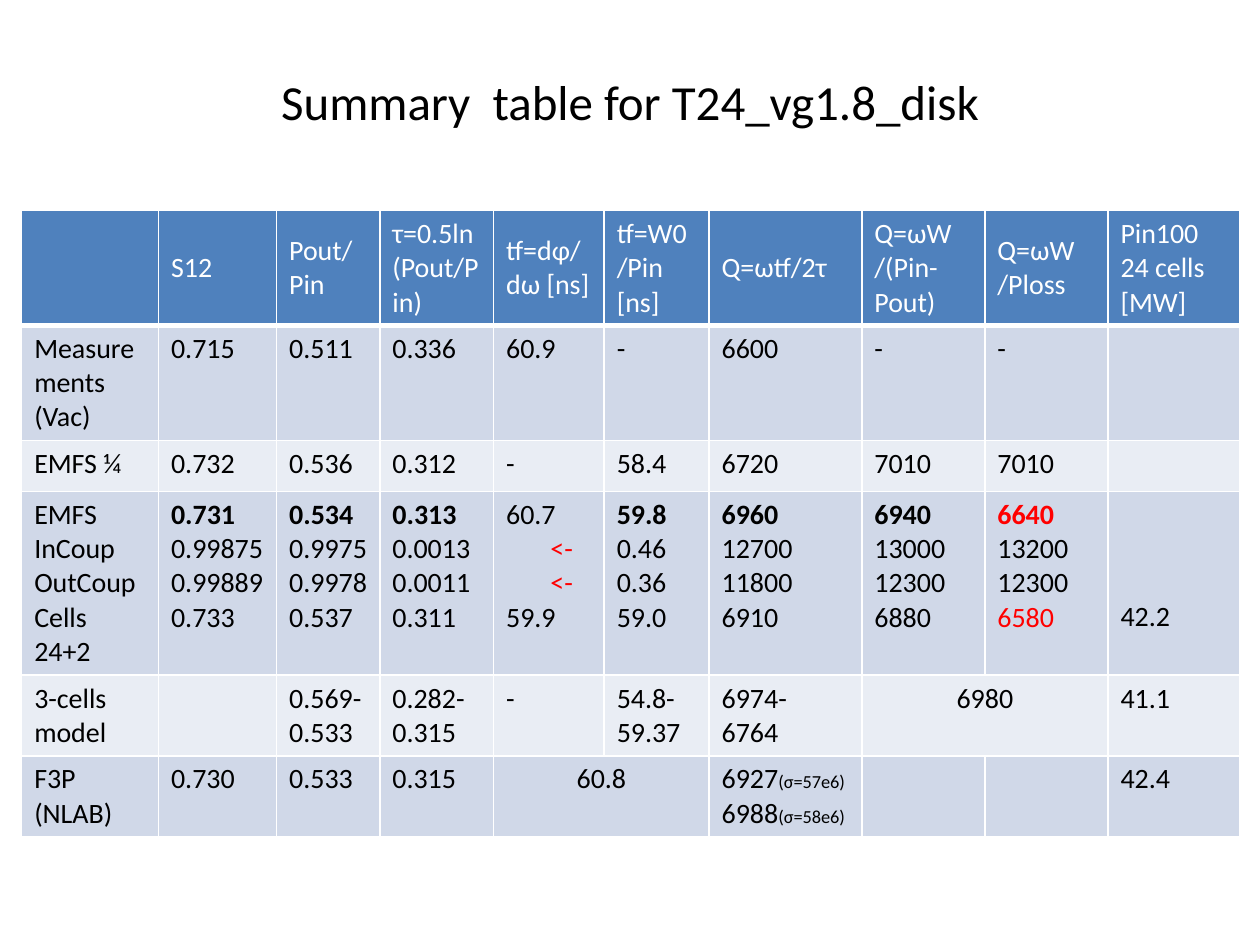
from dataclasses import dataclass

from lxml.etree import SubElement
from pptx import Presentation
from pptx.dml.color import RGBColor as Rgb
from pptx.enum.text import MSO_ANCHOR as Anchor, PP_ALIGN as Align
from pptx.oxml.ns import qn
from pptx.util import Pt


# Colours and type sizes
@dataclass(frozen=True)
class Theme:
    font: str = "Calibri"
    title: float = 28
    body: float = 16
    small: float = 10.5
    black: str = "000000"
    white: str = "FFFFFF"
    red: str = "FF0000"
    header: str = "4F81BD"
    bands: tuple = ("D0D8E8", "E9EDF4")


THEME = Theme()
LINE = 19.5  # height of one line of body text


def span(text, **style):
    """A piece of text with its format: size, color, bold, indent."""
    return text, style


def lead(first, *rest, **style):
    """A bold first line above plain lines."""
    return [span(first, bold=True, **style), *rest]


class SlideBuilder:
    def __init__(self, page, theme):
        self.page, self.theme = page, theme

    def fill_text(self, frame, lines, color, size, align=Align.LEFT):
        """Fill a text frame; each line is a string, a span or a list of spans."""
        for number, line in enumerate(lines):
            para = frame.paragraphs[0] if number == 0 else frame.add_paragraph()
            para.alignment = align
            for piece in line if isinstance(line, list) else [line]:
                text, style = span(piece) if isinstance(piece, str) else piece
                run = para.add_run()
                run.text = text
                run.font.name = self.theme.font
                run.font.size = Pt(style.get("size", size))
                run.font.bold = style.get("bold", False)
                run.font.color.rgb = Rgb.from_string(style.get("color", color))
                if "indent" in style:
                    para._p.get_or_add_pPr().set("marL", str(Pt(style["indent"])))

    def title(self, text, left, top, width, height):
        box = self.page.shapes.add_textbox(Pt(left), Pt(top), Pt(width), Pt(height))
        frame = box.text_frame
        frame.word_wrap = True
        frame.vertical_anchor = Anchor.MIDDLE
        self.fill_text(frame, [text], self.theme.black, self.theme.title, Align.CENTER)

    def borders(self, cell, bottom):
        props = cell._tc.get_or_add_tcPr()
        for side, width in (("L", 1), ("R", 1), ("T", 1), ("B", bottom)):
            line = SubElement(props, qn(f"a:ln{side}"), w=str(Pt(width)))
            fill = SubElement(line, qn("a:solidFill"))
            SubElement(fill, qn("a:srgbClr"), val=self.theme.white)

    def table(self, rows, left, top, widths, heights, merged=(), lowered=None):
        """merged holds cells joined to the right; lowered maps cells to lines of offset."""
        theme = self.theme
        grid = self.page.shapes.add_table(
            len(rows), len(widths), Pt(left), Pt(top), Pt(sum(widths)), Pt(sum(heights))
        ).table
        grid.first_row = grid.horz_banding = False
        for column, width in zip(grid.columns, widths):
            column.width = Pt(width)
        for r, (row, height) in enumerate(zip(rows, heights)):
            grid.rows[r].height = Pt(height)
            is_header = r == 0
            background = theme.header if is_header else theme.bands[(r - 1) % 2]
            for c, content in enumerate(row):
                cell = grid.cell(r, c)
                self.borders(cell, 3 if is_header else 1)
                cell.fill.solid()
                cell.fill.fore_color.rgb = Rgb.from_string(background)
                cell.vertical_anchor = Anchor.MIDDLE if is_header else Anchor.TOP
                if lowered and (r, c) in lowered:
                    cell.margin_top = Pt(3.6 + LINE * lowered[r, c])
                lines = content.split("\n") if isinstance(content, str) else content
                if content:
                    self.fill_text(
                        cell.text_frame, lines,
                        theme.white if is_header else theme.black, theme.body,
                        Align.CENTER if (r, c) in merged else Align.LEFT,
                    )
        for r, c in merged:
            grid.cell(r, c).merge(grid.cell(r, c + 1))


# Table contents
ARROW = span("<-", color=THEME.red, indent=25.3)
ROWS = [
    ["", "S12", "Pout/Pin", "τ=0.5ln (Pout/Pin)", "tf=dφ/dω [ns]", "tf=W0/Pin [ns]",
     "Q=ωtf/2τ", "Q=ωW\n/(Pin-Pout)", "Q=ωW\n/Ploss", "Pin100\n24 cells\n[MW]"],
    ["Measurements (Vac)", "0.715", "0.511", "0.336", "60.9", "-", "6600", "-", "-", ""],
    ["EMFS ¼", "0.732", "0.536", "0.312", "-", "58.4", "6720", "7010", "7010", ""],
    ["EMFS InCoup\nOutCoup\nCells 24+2",
     lead("0.731", "0.99875", "0.99889", "0.733"),
     lead("0.534", "0.9975", "0.9978", "0.537"),
     lead("0.313", "0.0013", "0.0011", "0.311"),
     ["60.7", ARROW, ARROW, "59.9"],
     lead("59.8", "0.46", "0.36", "59.0"),
     lead("6960", "12700", "11800", "6910"),
     lead("6940", "13000", "12300", "6880"),
     lead("6640", "13200", "12300", span("6580", color=THEME.red), color=THEME.red),
     "42.2"],
    ["3-cells model", "", "0.569-\n0.533", "0.282-\n0.315", "-", "54.8-\n59.37",
     "6974-\n6764", "6980", "", "41.1"],
    ["F3P (NLAB)", "0.730", "0.533", "0.315", "60.8", "",
     [["6927", span("(σ=57e6)", size=THEME.small)],
      ["6988", span("(σ=58e6)", size=THEME.small)]],
     "", "", "42.4"],
]
WIDTHS = [78.2, 67.5, 59, 65, 63.2, 60, 87.3, 70.3, 70.3, 75.3]
HEIGHTS = [65.6, 65.6, 29.2, 105, 46.2, 46.2]


def main():
    deck = Presentation()
    deck.slide_width, deck.slide_height = Pt(720), Pt(540)
    page = deck.slides.add_slide(deck.slide_layouts[6])
    builder = SlideBuilder(page, THEME)

    # Heading
    builder.title("Summary  table for T24_vg1.8_disk", 36, 12.5, 648, 90)

    # Results by method
    builder.table(ROWS, 12.4, 120.4, WIDTHS, HEIGHTS,
                  merged=[(4, 7), (5, 4)], lowered={(3, 9): 3})

    deck.save("out.pptx")


if __name__ == "__main__":
    main()
